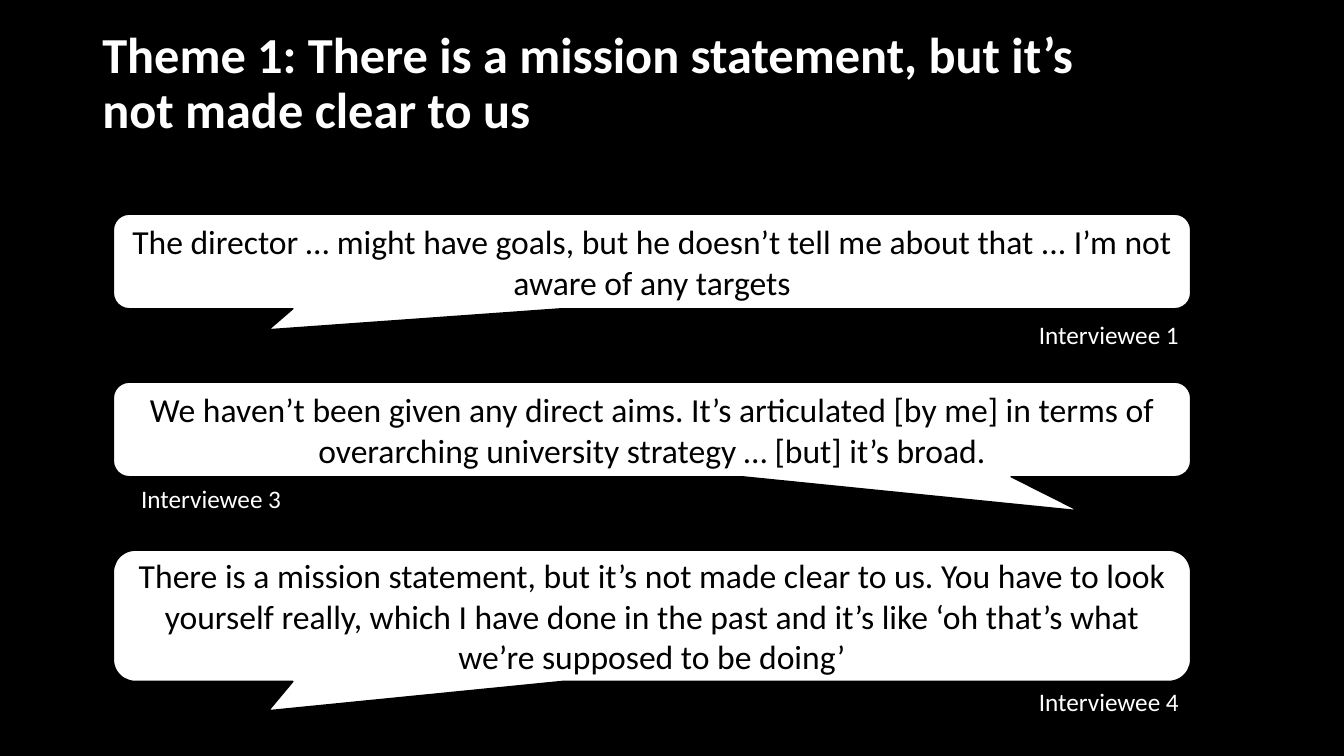
from pptx import Presentation
from pptx.dml.color import RGBColor
from pptx.enum.shapes import MSO_SHAPE as Shape
from pptx.enum.text import MSO_ANCHOR as Anchor, MSO_AUTO_SIZE as AutoSize, PP_ALIGN as Align
from pptx.util import Emu, Pt

PX = 9525
COLOURS = {"black": "000000", "white": "FFFFFF"}
TAIL_LEFT = (-0.356, 0.723, 0.167)
TAIL_RIGHT = (0.396, 0.86, 0.167)
FIRST_TOP, QUOTE_PITCH = 204, 160
QUOTES = [
    ("The director … might have goals, but he doesn’t tell me about that ... "
     "I’m not aware of any targets", 90, TAIL_LEFT, "Interviewee 1", 980, 299),
    ("We haven’t been given any direct aims. It’s articulated [by me] in terms of "
     "overarching university strategy … [but] it’s broad.", 90, TAIL_RIGHT,
     "Interviewee 3", 125, 456),
    ("There is a mission statement, but it’s not made clear to us. You have to look "
     "yourself really, which I have done in the past and it’s like ‘oh that’s what "
     "we’re supposed to be doing’", 125, TAIL_LEFT, "Interviewee 4", 980, 649),
]


def colour(name):
    return RGBColor.from_string(COLOURS[name])


def write(box, text, size=18, ink="white", bold=False, align=Align.LEFT,
          anchor=Anchor.TOP, spacing=1.0, wrap=True):
    frame = box.text_frame
    frame.word_wrap = wrap
    frame.auto_size = AutoSize.NONE if wrap else AutoSize.SHAPE_TO_FIT_TEXT
    frame.vertical_anchor = anchor
    para = frame.paragraphs[0]
    para.alignment = align
    para.line_spacing = spacing
    span = para.add_run()
    span.text = text
    span.font.name = "Calibri"
    span.font.size = Pt(size)
    span.font.bold = bold
    span.font.color.rgb = colour(ink)


class QuoteSlide:
    def __init__(self, deck):
        self.page = deck.slides.add_slide(deck.slide_layouts[6])
        backdrop = self.page.background.fill
        backdrop.solid()
        backdrop.fore_color.rgb = colour("black")

    def text(self, place, text, **style):
        box = self.page.shapes.add_textbox(*(Emu(n * PX) for n in place))
        write(box, text, **style)

    def callout(self, place, text, tail):
        bubble = self.page.shapes.add_shape(
            Shape.ROUNDED_RECTANGULAR_CALLOUT, *(Emu(n * PX) for n in place))
        for index, value in enumerate(tail):
            bubble.adjustments[index] = value
        bubble.shadow.inherit = False
        bubble.fill.solid()
        bubble.fill.fore_color.rgb = colour("white")
        bubble.line.color.rgb = colour("black")
        bubble.line.width = Pt(1)
        write(bubble, text, size=24, ink="black", align=Align.CENTER, anchor=Anchor.MIDDLE)


def main():
    deck = Presentation()
    deck.slide_width, deck.slide_height = Emu(1280 * PX), Emu(720 * PX)
    slide = QuoteSlide(deck)
    slide.text((88, 11, 946, 139),
               "Theme 1: There is a mission statement, but it’s not made clear to us",
               size=36, bold=True, anchor=Anchor.MIDDLE, spacing=0.9)
    for row, (quote, height, tail, speaker, left, top) in enumerate(QUOTES):
        slide.callout((108, FIRST_TOP + row * QUOTE_PITCH, 1026, height), quote, tail)
        slide.text((left, top, 155, 38), speaker, wrap=False)
    deck.save("out.pptx")


if __name__ == "__main__":
    main()
